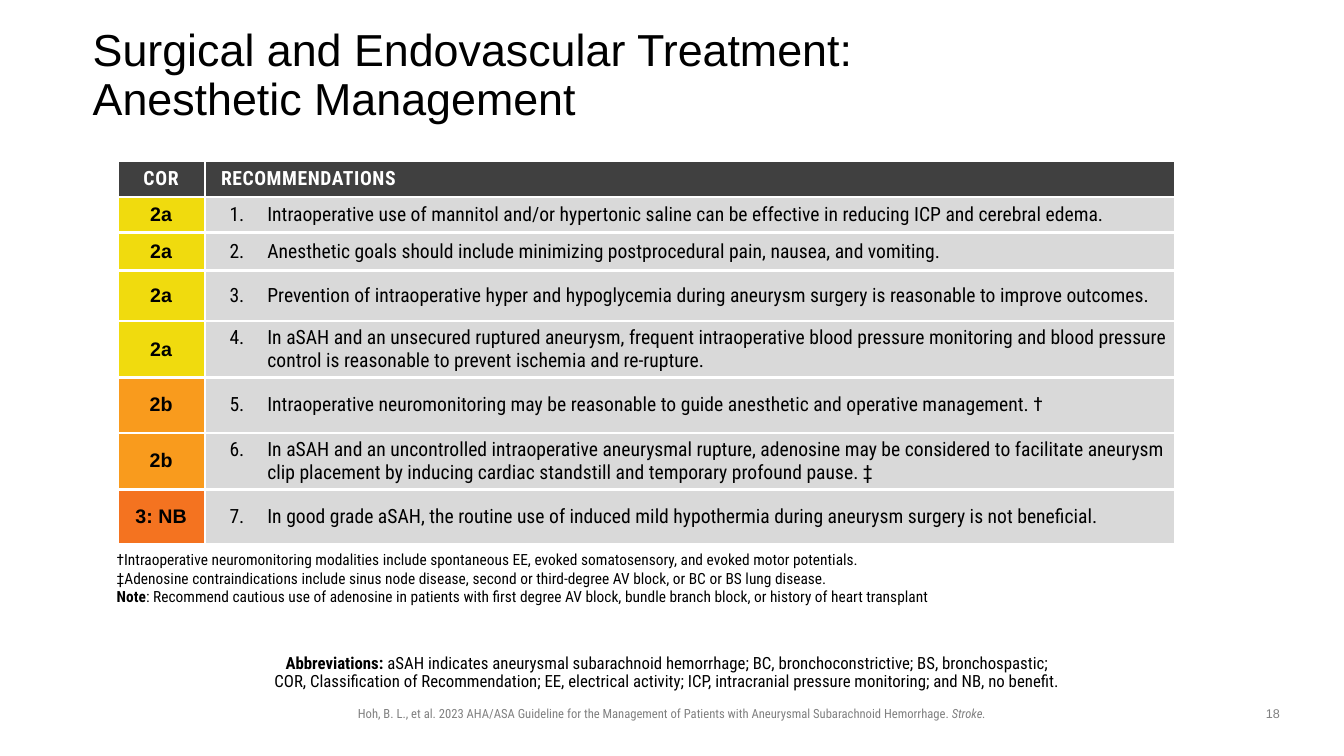
"""Build the anesthetic management recommendations slide."""
from lxml.etree import SubElement
from pptx import Presentation
from pptx.dml.color import RGBColor
from pptx.enum.text import MSO_ANCHOR as Anchor, MSO_AUTO_SIZE as AutoSize, PP_ALIGN as Align
from pptx.oxml import parse_xml
from pptx.oxml.ns import nsdecls, qn
from pptx.util import Pt

COLORS = {
    "black": "000000", "white": "FFFFFF", "gray": "808080",
    "header": "404040", "row": "D9D9D9",
    "2a": "F0DB0E", "2b": "F99B1D", "3: NB": "F47320",
}
SANS, CONDENSED = "Arial", "Roboto Condensed"
RECOMMENDATIONS = [
    ("2a", 25.2, "Intraoperative use of mannitol and/or hypertonic saline can be effective in reducing ICP and cerebral edema."),
    ("2a", 27.4, "Anesthetic goals should include minimizing postprocedural pain, nausea, and vomiting."),
    ("2a", 36, "Prevention of intraoperative hyper and hypoglycemia during aneurysm surgery is reasonable to improve outcomes."),
    ("2a", 39.6, "In aSAH and an unsecured ruptured aneurysm, frequent intraoperative blood pressure monitoring and blood pressure control is reasonable to prevent ischemia and re-rupture."),
    ("2b", 39.6, "Intraoperative neuromonitoring may be reasonable to guide anesthetic and operative management. †"),
    ("2b", 39.6, "In aSAH and an uncontrolled intraoperative aneurysmal rupture, adenosine may be considered to facilitate aneurysm clip placement by inducing cardiac standstill and temporary profound pause. ‡"),
    ("3: NB", 39.6, "In good grade aSAH, the routine use of induced mild hypothermia during aneurysm surgery is not beneficial."),
]
FOOTNOTES = [
    ["†Intraoperative neuromonitoring modalities include spontaneous EE, evoked somatosensory, and evoked motor potentials."],
    ["‡Adenosine contraindications include sinus node disease, second or third-degree AV block, or BC or BS lung disease."],
    ["Note", ": Recommend cautious use of adenosine in patients with first degree AV block, bundle branch block, or history of heart transplant"],
]


def set_font(paragraph, name, size, color="black", bold=False, align=Align.LEFT):
    paragraph.alignment = align
    font = paragraph.font
    font.name, font.size, font.bold = name, Pt(size), bold
    font.color.rgb = RGBColor.from_string(COLORS[color])


def format_cell(cell, text, fill, margin):
    cell.text = text
    cell.vertical_anchor = Anchor.MIDDLE
    cell.margin_left = cell.margin_right = Pt(margin)
    cell.margin_top = cell.margin_bottom = Pt(3.6)
    cell.fill.solid()
    cell.fill.fore_color.rgb = RGBColor.from_string(COLORS[fill])
    properties = cell._tc.get_or_add_tcPr()
    for index, side in enumerate(("lnL", "lnR", "lnT", "lnB")):
        properties.insert(index, parse_xml(
            f'<a:{side} {nsdecls("a")} w="{Pt(2.25)}"><a:solidFill>'
            f'<a:srgbClr val="{COLORS["white"]}"/></a:solidFill></a:{side}>'))
    return cell.text_frame.paragraphs[0]


presentation = Presentation()
presentation.slide_width, presentation.slide_height = Pt(960), Pt(540)
slide = presentation.slides.add_slide(presentation.slide_layouts[1])

title = slide.shapes.title
title.left, title.top, title.width, title.height = Pt(66.2), Pt(28.8), Pt(828), Pt(51.8)
frame = title.text_frame
frame.text = "Surgical and Endovascular Treatment:\vAnesthetic Management"
frame.margin_left = frame.margin_top = frame.margin_right = frame.margin_bottom = 0
frame.vertical_anchor, frame.auto_size = Anchor.MIDDLE, AutoSize.NONE
frame.paragraphs[0].line_spacing = 0.9
frame.paragraphs[0].space_before = Pt(0)
set_font(frame.paragraphs[0], SANS, 32)

table = slide.shapes.add_table(len(RECOMMENDATIONS) + 1, 2, Pt(83.8), Pt(114.8), Pt(756), Pt(272.9)).table
table.columns[0].width, table.columns[1].width = Pt(62.6), Pt(693.4)
table.rows[0].height = Pt(25.9)
headings = [("COR", Align.CENTER, 7.2, 50), ("RECOMMENDATIONS", Align.LEFT, 11.5, 40)]
for column, (heading, align, margin, spacing) in enumerate(headings):
    paragraph = format_cell(table.cell(0, column), heading, "header", margin)
    set_font(paragraph, CONDENSED, 14, "white", True, align)
    paragraph._p.pPr.find(qn("a:defRPr")).set("spc", str(spacing))

for number, (grade, height, text) in enumerate(RECOMMENDATIONS, 1):
    table.rows[number].height = Pt(height)
    paragraph = format_cell(table.cell(number, 0), grade, grade, 3.6)
    set_font(paragraph, SANS, 14, bold=True, align=Align.CENTER)
    paragraph = format_cell(table.cell(number, 1), text, "row", 3.6)
    properties = paragraph._p.get_or_add_pPr()
    properties.set("marL", str(Pt(41)))
    properties.set("indent", str(Pt(-27)))
    SubElement(properties, qn("a:buAutoNum"), type="arabicPeriod", startAt=str(number))
    set_font(paragraph, CONDENSED, 14)

footnotes = slide.shapes.add_textbox(Pt(76.3), Pt(389.5), Pt(789), Pt(47.5)).text_frame
footnotes.word_wrap = True
for index, runs in enumerate(FOOTNOTES):
    paragraph = footnotes.add_paragraph() if index else footnotes.paragraphs[0]
    for text in runs:
        run = paragraph.add_run()
        run.text = text
        if text == "Note":
            run.font.bold = True
    set_font(paragraph, CONDENSED, 11)

abbreviations = slide.placeholders[1]
abbreviations.left, abbreviations.top = Pt(66.2), Pt(464.4)
abbreviations.width, abbreviations.height = Pt(828), Pt(21.6)
frame = abbreviations.text_frame
frame.margin_left, frame.margin_right = 0, Pt(7.2)
frame.margin_top = frame.margin_bottom = Pt(3.6)
frame.vertical_anchor, frame.auto_size = Anchor.TOP, AutoSize.NONE
paragraph = frame.paragraphs[0]
label = paragraph.add_run()
label.text = "Abbreviations: "
label.font.bold = True
paragraph.add_run().text = "aSAH indicates aneurysmal subarachnoid hemorrhage; BC, bronchoconstrictive; BS, bronchospastic;"
paragraph.add_line_break()
paragraph.add_run().text = "COR, Classification of Recommendation; EE, electrical activity; ICP, intracranial pressure monitoring; and NB, no benefit."
paragraph.line_spacing, paragraph.space_before = 0.9, Pt(0)
properties = paragraph._p.get_or_add_pPr()
properties.set("marL", "0")
properties.set("indent", "0")
SubElement(properties, qn("a:buNone"))
set_font(paragraph, CONDENSED, 12, align=Align.CENTER)

citation = slide.shapes.add_textbox(Pt(211.7), Pt(500.4), Pt(536.4), Pt(18)).text_frame
citation.word_wrap = True
paragraph = citation.paragraphs[0]
paragraph.add_run().text = "Hoh, B. L., et al. 2023 AHA/ASA Guideline for the Management of Patients with Aneurysmal Subarachnoid Hemorrhage. "
journal = paragraph.add_run()
journal.text = "Stroke."
journal.font.italic = True
set_font(paragraph, CONDENSED, 9, "gray", align=Align.CENTER)

page_number = slide.shapes.add_textbox(Pt(894.2), Pt(500.4), Pt(30.2), Pt(18.7)).text_frame
page_number.word_wrap = True
page_number.text = "18"
set_font(page_number.paragraphs[0], SANS, 9, "gray", align=Align.CENTER)

presentation.save("out.pptx")
